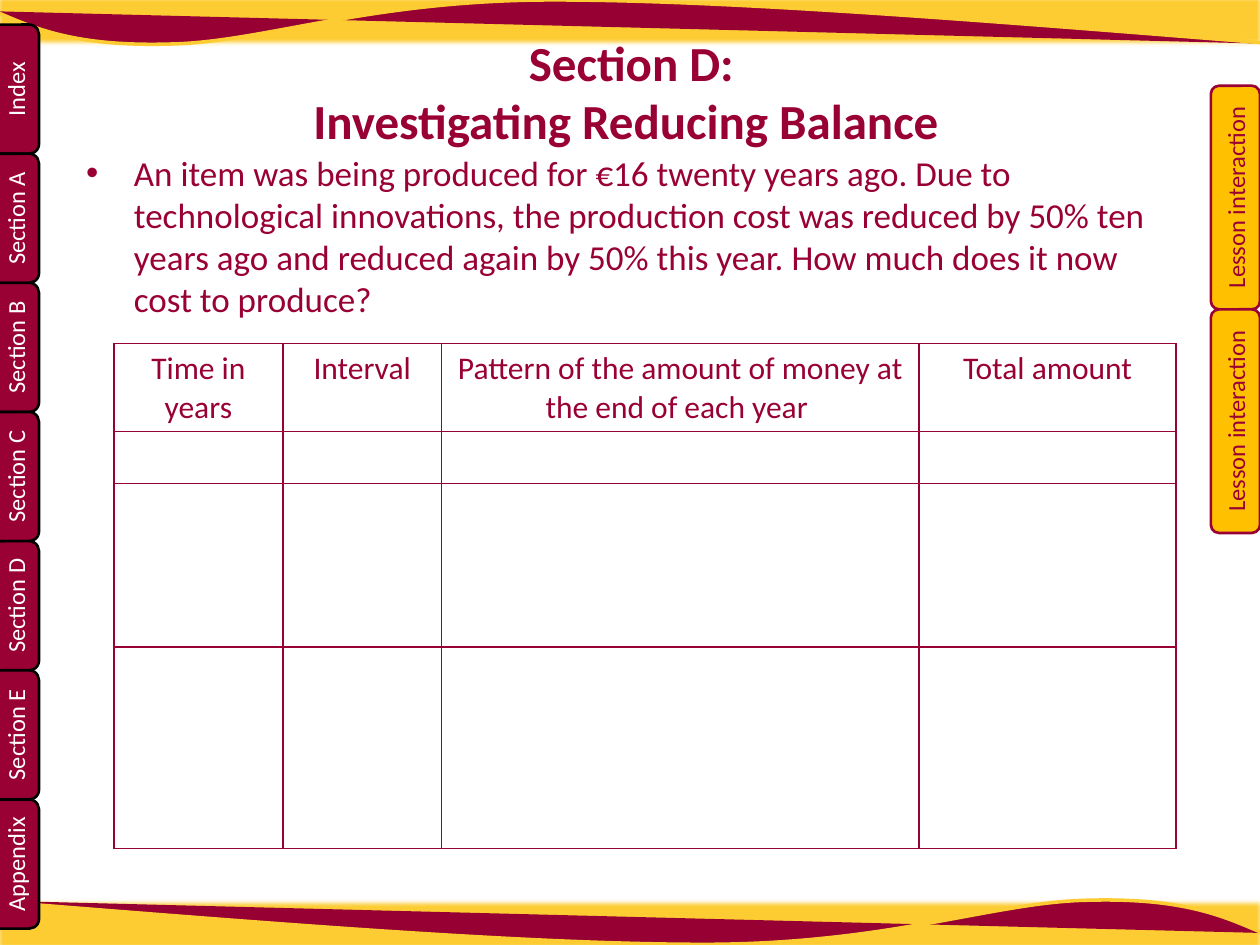
from dataclasses import dataclass
from lxml import etree
from pptx import Presentation
from pptx.dml.color import RGBColor
from pptx.enum.shapes import MSO_SHAPE
from pptx.enum.text import MSO_ANCHOR, PP_ALIGN
from pptx.oxml.ns import qn
from pptx.util import Inches, Pt

RECT, ROUND = MSO_SHAPE.RECTANGLE, MSO_SHAPE.ROUNDED_RECTANGLE
LEFT, CENTER = PP_ALIGN.LEFT, PP_ALIGN.CENTER
TOP, MIDDLE, BOTTOM = MSO_ANCHOR.TOP, MSO_ANCHOR.MIDDLE, MSO_ANCHOR.BOTTOM
COLS, ROWS = 100, 75  # grid of the slide
UNIT = Inches(10) // COLS


@dataclass(frozen=True)
class Theme:
    font: str = "Calibri"
    wine: str = "990033"
    wave: str = "970033"
    gold: str = "FDCC33"
    amber: str = "FFC000"
    black: str = "000000"
    white: str = "FFFFFF"
    title: int = 28
    body: int = 20
    cell: int = 18
    tab: int = 14


THEME = Theme()


def grid(*nums):
    """Grid steps to lengths."""
    return [round(num * UNIT) for num in nums]


def paint(shape, fill, line=None, width=1.5):
    shape.shadow.inherit = False
    shape.fill.solid()
    shape.fill.fore_color.rgb = RGBColor.from_string(fill)
    if line:
        shape.line.color.rgb = RGBColor.from_string(line)
        shape.line.width = Pt(width)
    else:
        shape.line.fill.background()


def style(frame, size, color, align=CENTER, bold=False):
    for para in frame.paragraphs:
        para.alignment = align
        for run in para.runs:
            font = run.font
            font.name, font.size, font.bold = THEME.font, Pt(size), bold
            font.color.rgb = RGBColor.from_string(color)


def curve(slide, dots):
    """Open chain of cubic curves: a start, then three points for each."""
    pen = slide.shapes.build_freeform(*dots[0])
    pen.add_line_segments(dots[1:], close=False)
    shape = pen.convert_to_shape()
    legs = list(shape._element.iter(qn("a:lnTo")))
    for i in range(0, len(legs), 3):
        bend = etree.Element(qn("a:cubicBezTo"))
        legs[i].addprevious(bend)
        for leg in legs[i:i + 3]:
            bend.append(leg[0])
            leg.getparent().remove(leg)
    return shape


def band(slide, box, turn=False):
    """Soft gold band with a wave; turn gives it a half turn."""
    x, y, w, h = box
    bar = slide.shapes.add_shape(RECT, *grid(*box))
    paint(bar, THEME.gold)
    soft = bar._element.spPr.find(qn("a:effectLst"))
    etree.SubElement(soft, qn("a:softEdge"), rad=str(Pt(2.5)))
    dots = [(101.5, 3.5), (80.1, 1.8), (58.6, 0), (43.9, 0),
            (29.2, 0), (20.8, 3.4), (13.4, 3.5),
            (6, 3.7), (2.8, 2.3), (-.4, .9)]
    if turn:
        dots = [(COLS - .2 - p, ROWS - .05 - q) for p, q in dots]
    wave = curve(slide, [tuple(grid(*dot)) for dot in dots])
    paint(wave, THEME.wave, THEME.gold, 2)


def tabs(slide, box, names, fill, line, ink, anchor):
    """Column of equal tabs, read upwards."""
    x, y, w, h = box
    step = h / len(names)
    for i, name in enumerate(names):
        mid = y + (i + .5) * step
        tab = slide.shapes.add_shape(
            ROUND, *grid(x + (w - step) / 2, mid - w / 2, step, w))
        tab.rotation = 270
        paint(tab, fill, line)
        frame = tab.text_frame
        frame.text = name
        frame.word_wrap = True
        frame.vertical_anchor = anchor
        style(frame, THEME.tab, ink)


def head(slide, box, text):
    title = slide.shapes.title
    slide.shapes._spTree.append(title._element)
    title.left, title.top, title.width, title.height = grid(*box)
    frame = title.text_frame
    frame.text = text
    frame.vertical_anchor = TOP
    style(frame, THEME.title, THEME.wine, bold=True)


def point(slide, box, text):
    """Bulleted paragraph."""
    frame = slide.shapes.add_textbox(*grid(*box)).text_frame
    frame.word_wrap = True
    frame.text = text
    style(frame, THEME.body, THEME.wine, LEFT)
    props = frame.paragraphs[0]._p.get_or_add_pPr()
    dent = Inches(.38)
    props.set("marL", str(dent))
    props.set("indent", str(-dent))
    etree.SubElement(props, qn("a:buFont"), typeface="Arial")
    etree.SubElement(props, qn("a:buChar"), char="•")


def frame_cell(cell):
    """Thin border on all sides, no fill."""
    props = cell._tc.get_or_add_tcPr()
    for side in ("lnL", "lnR", "lnT", "lnB"):
        line = etree.SubElement(props, qn("a:" + side), w=str(Pt(1)))
        fill = etree.SubElement(line, qn("a:solidFill"))
        etree.SubElement(fill, qn("a:srgbClr"), val=THEME.wine)
    cell.fill.background()


def sheet(slide, box, heads, cols, rows):
    table = slide.shapes.add_table(len(rows), len(cols), *grid(*box)).table
    table.first_row = table.horz_banding = False
    for col, width in zip(table.columns, grid(*cols)):
        col.width = width
    for row, height in zip(table.rows, grid(*rows)):
        row.height = height
    for cell, text in zip(table.rows[0].cells, heads):
        cell.text = text
        style(cell.text_frame, THEME.cell, THEME.wine)
    for cell in table.iter_cells():
        frame_cell(cell)


def main():
    deck = Presentation()
    deck.slide_width, deck.slide_height = COLS * UNIT, ROWS * UNIT
    slide = deck.slides.add_slide(deck.slide_layouts[5])
    band(slide, (-.4, -.5, 100.8, 4.2))
    band(slide, (-.4, 71.3, 100.8, 4.2), turn=True)
    names = ["Index", *(f"Section {mark}" for mark in "ABCDE"), "Appendix"]
    tabs(slide, (-1.6, 1.95, 4.7, 71.75), names,
         THEME.wine, THEME.black, THEME.white, BOTTOM)
    head(slide, (19.5, 2.05, 61.2, 10.4),
         "Section D:\nInvestigating Reducing Balance ")
    point(slide, (5.85, 11.5, 87.4, 17.8),
          "An item was being produced for €16 twenty years ago. Due to "
          "technological innovations, the production cost was reduced by 50% "
          "ten years ago and reduced again by 50% this year. How much does it "
          "now cost to produce?")
    sheet(slide, (9.05, 27.25, 84.3, 40.1),
          ["Time in years", "Interval",
           "Pattern of the amount of money at the end of each year ",
           "Total amount"],
          (13.4, 12.6, 37.9, 20.4), (7, 4.1, 13, 16))
    tabs(slide, (96.1, 6.8, 3.9, 35.5), ["Lesson interaction"] * 2,
         THEME.amber, THEME.wine, THEME.wine, MIDDLE)
    deck.save("out.pptx")


if __name__ == "__main__":
    main()
